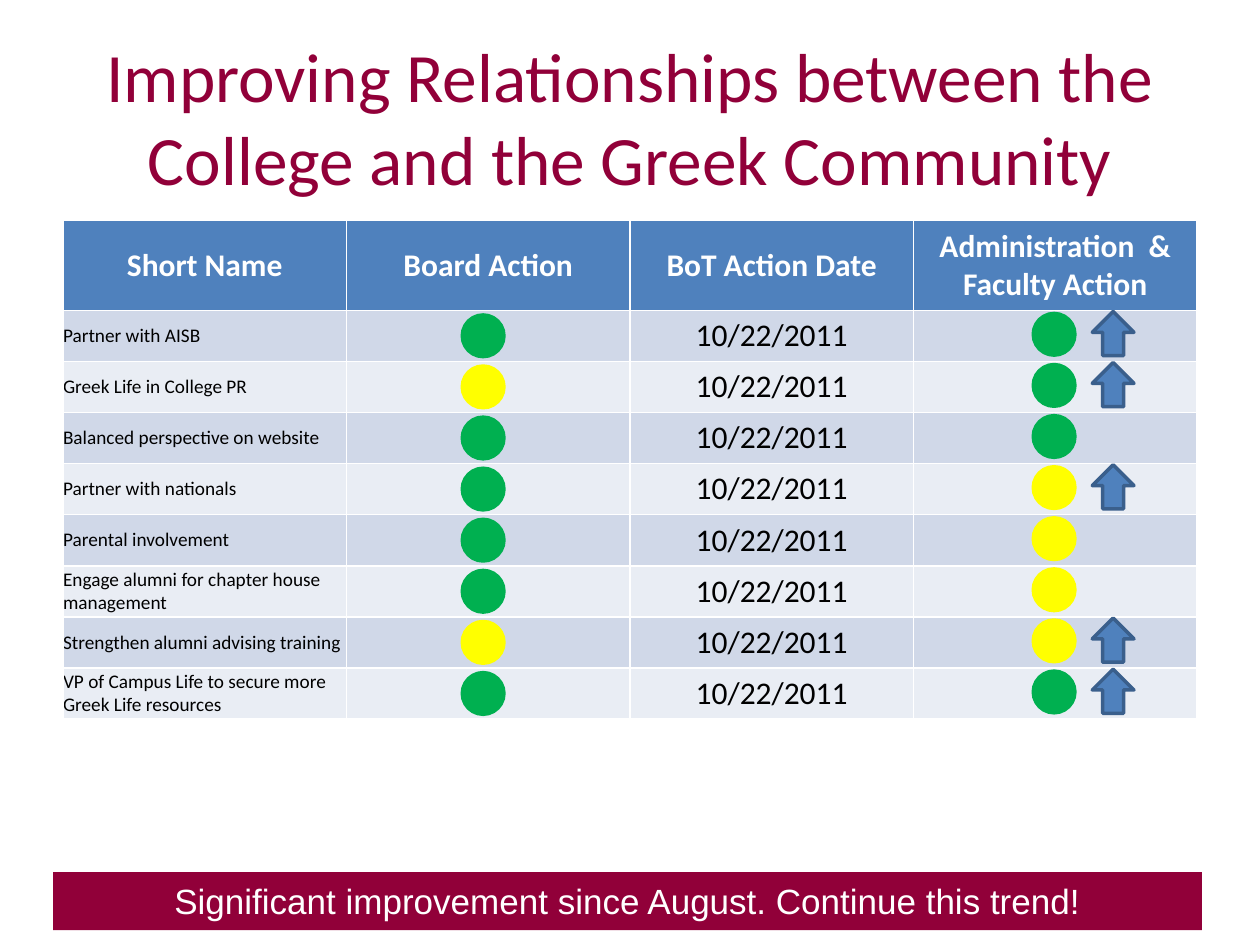
from dataclasses import dataclass

from pptx import Presentation
from pptx import util as u
from pptx.dml.color import RGBColor
from pptx.enum import shapes, text

MAROON = RGBColor(0x91, 0x00, 0x39)
WHITE = RGBColor(0xFF, 0xFF, 0xFF)
BLACK = RGBColor(0x00, 0x00, 0x00)
BLUE = RGBColor(0x4F, 0x81, 0xBD)
NAVY = RGBColor(0x3A, 0x5F, 0x8C)
GREEN = RGBColor(0x00, 0xB0, 0x50)
YELLOW = RGBColor(0xFF, 0xFF, 0x00)
BANDS = (RGBColor(0xD0, 0xD8, 0xE8), RGBColor(0xE9, 0xED, 0xF4))

HEADS = ("Short Name", "Board Action", "BoT Action Date",
         "Administration  & Faculty Action")
DATE = "10/22/2011"
HEAD_H, ROW_H = 1.78, 1.03


@dataclass
class Goal:
    name: str
    board: RGBColor
    staff: RGBColor
    rising: bool = False


@dataclass
class Mark:
    """A status symbol: its preset shape and its place in the first row, in cm."""
    kind: shapes.MSO_SHAPE
    left: float
    top: float
    width: float
    height: float


GOALS = (
    Goal("Partner with AISB", GREEN, GREEN, True),
    Goal("Greek Life in College PR", YELLOW, GREEN, True),
    Goal("Balanced perspective on website", GREEN, GREEN),
    Goal("Partner with nationals", GREEN, YELLOW, True),
    Goal("Parental involvement", GREEN, YELLOW),
    Goal("Engage alumni for chapter house management", GREEN, YELLOW),
    Goal("Strengthen alumni advising training", YELLOW, YELLOW, True),
    Goal("VP of Campus Life to secure more Greek Life resources",
         GREEN, GREEN, True),
)
BOARD = Mark(shapes.MSO_SHAPE.OVAL, 9.32, 6.35, 0.84, 0.84)
STAFF = Mark(shapes.MSO_SHAPE.OVAL, 20.83, 6.32, 0.84, 0.84)
TREND = Mark(shapes.MSO_SHAPE.UP_ARROW, 22.02, 6.28, 0.84, 0.89)


def style(para, size: float, color: RGBColor, font: str = "Calibri",
          bold: bool = False, center: bool = True) -> None:
    para.alignment = text.PP_ALIGN.CENTER if center else text.PP_ALIGN.LEFT
    para.font.name = font
    para.font.size = u.Pt(size)
    para.font.bold = bold
    para.font.color.rgb = color


def put_cell(cell, words: str, fill: RGBColor, size: float = 18,
             color: RGBColor = BLACK, **look) -> None:
    cell.text = words
    cell.vertical_anchor = text.MSO_ANCHOR.MIDDLE
    cell.fill.solid()
    cell.fill.fore_color.rgb = fill
    style(cell.text_frame.paragraphs[0], size, color, **look)


def add_title(slide) -> None:
    title = slide.shapes.title
    title.left, title.top = u.Cm(1.27), u.Cm(0.76)
    title.width, title.height = u.Cm(22.86), u.Cm(3.18)
    title.text = ("Improving Relationships between the College "
                  "and the Greek Community")
    title.text_frame.vertical_anchor = text.MSO_ANCHOR.MIDDLE
    style(title.text_frame.paragraphs[0], 39.6, MAROON)


def add_grid(slide) -> None:
    grid = slide.shapes.add_table(
        len(GOALS) + 1, len(HEADS), u.Cm(1.27), u.Cm(4.45),
        u.Cm(22.86), u.Cm(HEAD_H + ROW_H * len(GOALS))).table
    grid.rows[0].height = u.Cm(HEAD_H)
    for col, head in enumerate(HEADS):
        put_cell(grid.cell(0, col), head, BLUE, color=WHITE, bold=True)
    for row, goal in enumerate(GOALS, 1):
        grid.rows[row].height = u.Cm(ROW_H)
        band = BANDS[(row - 1) % 2]
        for col, words in enumerate(("", DATE, ""), 1):
            put_cell(grid.cell(row, col), words, band)
        name = grid.cell(row, 0)
        put_cell(name, goal.name, band, size=11, center=False)
        name.margin_left = name.margin_right = 0
        name.margin_top = name.margin_bottom = 0


def add_mark(slide, mark: Mark, row: int, fill: RGBColor, edge: RGBColor) -> None:
    shape = slide.shapes.add_shape(
        mark.kind, u.Cm(mark.left), u.Cm(mark.top + ROW_H * row),
        u.Cm(mark.width), u.Cm(mark.height))
    shape.shadow.inherit = False
    shape.fill.solid()
    shape.fill.fore_color.rgb = fill
    shape.line.color.rgb = edge
    shape.line.width = u.Pt(2)


def add_banner(slide) -> None:
    bar = slide.shapes.add_shape(
        shapes.MSO_SHAPE.RECTANGLE, u.Cm(1.07), u.Cm(17.58),
        u.Cm(23.16), u.Cm(1.17))
    bar.shadow.inherit = False
    bar.fill.solid()
    bar.fill.fore_color.rgb = MAROON
    bar.line.fill.background()
    frame = bar.text_frame
    frame.word_wrap = True
    frame.vertical_anchor = text.MSO_ANCHOR.BOTTOM
    frame.margin_bottom = u.Cm(0.18)
    frame.text = "Significant improvement since August. Continue this trend!"
    style(frame.paragraphs[0], 20, WHITE, font="Arial")


def main() -> None:
    deck = Presentation()
    deck.slide_width, deck.slide_height = u.Cm(25.4), u.Cm(19.05)
    slide = deck.slides.add_slide(deck.slide_layouts.get_by_name("Title Only"))
    add_title(slide)
    add_grid(slide)
    for row, goal in enumerate(GOALS):
        add_mark(slide, BOARD, row, goal.board, goal.board)
        add_mark(slide, STAFF, row, goal.staff, goal.staff)
        if goal.rising:
            add_mark(slide, TREND, row, BLUE, NAVY)
    add_banner(slide)
    deck.save("out.pptx")


if __name__ == "__main__":
    main()
